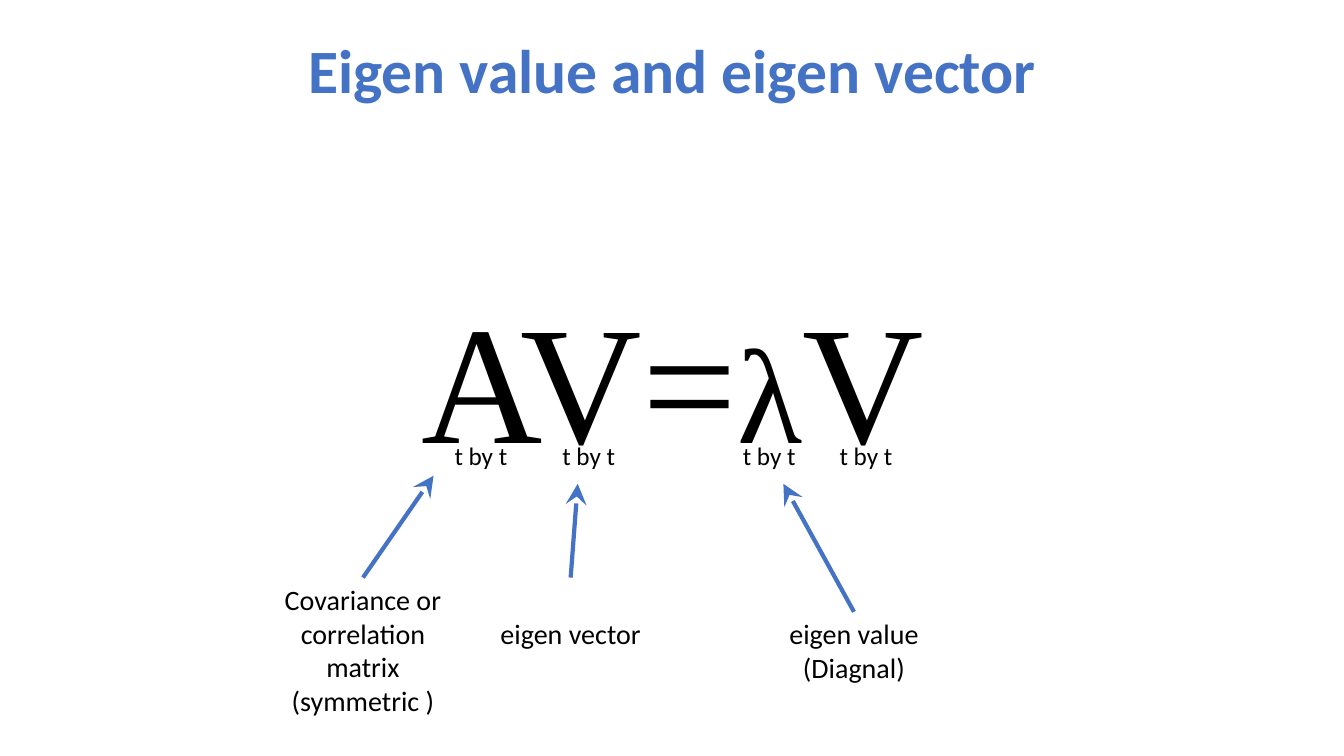
from dataclasses import dataclass

from lxml import etree
from pptx import Presentation
from pptx.dml.color import RGBColor
from pptx.enum.shapes import MSO_CONNECTOR
from pptx.enum.text import MSO_ANCHOR, PP_ALIGN
from pptx.oxml.ns import qn
from pptx.util import Inches, Pt


@dataclass(frozen=True)
class Theme:
    accent: RGBColor = RGBColor(0x44, 0x72, 0xC4)
    ink: RGBColor = RGBColor(0, 0, 0)
    sans: str = "Calibri"
    serif: str = "Times New Roman"
    title: int = 44
    symbol: int = 120
    small_symbol: int = 96
    label: int = 20
    dimension: int = 18
    arrow_width: int = 3


THEME = Theme()

EQUATION = [("AV=", THEME.symbol), ("λ", THEME.small_symbol), ("V", THEME.symbol)]

# Left edges of the size notes under A, V, λ and V
DIMENSION_LEFTS = [4.34, 5.41, 7.2, 8.16]

# Text, left, top, height, arrow start, arrow tip
LABELS = [
    ("Covariance or correlation matrix (symmetric )",
     2.67, 5.73, 1.45, (3.6, 5.73), (4.3, 4.72)),
    ("eigen vector", 4.73, 6.07, 0.44, (5.66, 5.73), (5.73, 4.8)),
    ("eigen value (Diagnal)", 7.54, 6.07, 0.77, (8.47, 6.07), (7.77, 4.8)),
]
LABEL_WIDTH = 1.86


def add_text(slide, box, runs, font_name=THEME.sans, color=THEME.ink):
    """Add a centred text box; runs is a list of (text, size) pairs."""
    shape = slide.shapes.add_textbox(*map(Inches, box))
    shape.text_frame.word_wrap = True
    paragraph = shape.text_frame.paragraphs[0]
    paragraph.alignment = PP_ALIGN.CENTER
    paragraph.font.name = font_name
    paragraph.font.color.rgb = color
    paragraph.font.size = Pt(runs[0][1])
    for text, size in runs:
        run = paragraph.add_run()
        run.text = text
        if size != runs[0][1]:
            run.font.size = Pt(size)
    return shape


def add_title(slide, text):
    shape = add_text(slide, (0.92, 0, 11.5, 1.45), [(text, THEME.title)],
                     color=THEME.accent)
    shape.text_frame.vertical_anchor = MSO_ANCHOR.MIDDLE
    paragraph = shape.text_frame.paragraphs[0]
    paragraph.font.bold = True
    paragraph.line_spacing = 0.9


def add_arrow(slide, start, tip):
    arrow = slide.shapes.add_connector(
        MSO_CONNECTOR.STRAIGHT, *map(Inches, (*start, *tip)))
    arrow.line.color.rgb = THEME.accent
    arrow.line.width = Pt(THEME.arrow_width)
    etree.SubElement(arrow.line._get_or_add_ln(), qn("a:tailEnd"),
                     type="stealth", w="lg", len="lg")
    etree.SubElement(arrow._element.spPr, qn("a:effectLst"))
    return arrow


def add_label(slide, text, left, top, height, start, tip):
    """Add a label and the arrow from it to its symbol."""
    arrow = add_arrow(slide, start, tip)
    label = add_text(slide, (left, top, LABEL_WIDTH, height),
                     [(text, THEME.label)])
    if start[1] == top:
        arrow.begin_connect(label, 0)


def main():
    presentation = Presentation()
    presentation.slide_width = Inches(13.33)
    presentation.slide_height = Inches(7.5)
    slide = presentation.slides.add_slide(presentation.slide_layouts[6])

    # Title and equation
    add_title(slide, "Eigen value and eigen vector")
    add_text(slide, (3.8, 2.68, 5.74, 2.12), EQUATION, THEME.serif)

    # Labels with arrows
    for label in LABELS:
        add_label(slide, *label)

    # Matrix sizes
    for left in DIMENSION_LEFTS:
        add_text(slide, (left, 4.32, 0.86, 0.4), [("t by t", THEME.dimension)])

    presentation.save("out.pptx")


if __name__ == "__main__":
    main()
